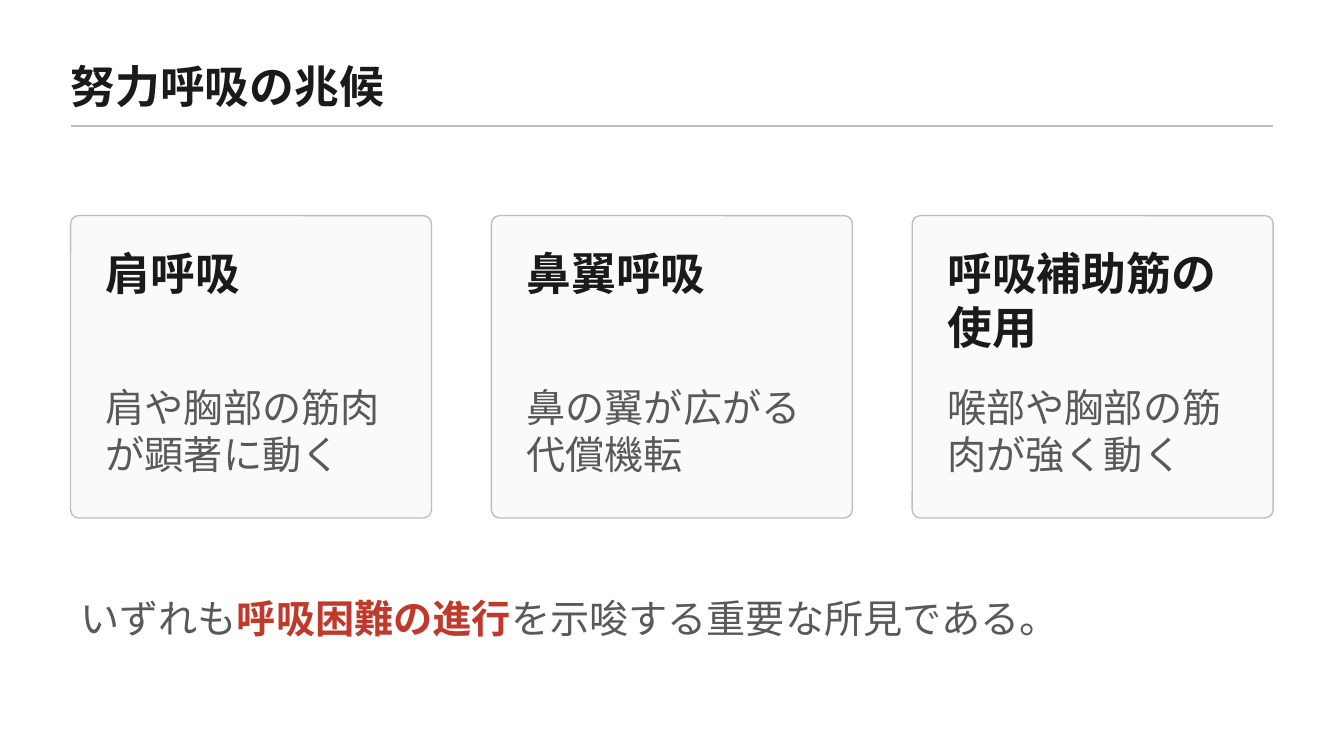
from pptx import Presentation
from pptx.dml.color import RGBColor
from pptx.enum.shapes import MSO_CONNECTOR, MSO_SHAPE
from pptx.enum.text import MSO_ANCHOR
from pptx.oxml.ns import qn
from pptx.util import Pt

INK, GREY, RED = "1A1A1A", "595959", "C0392B"
RULE, PALE = "BFBFBF", "FAFAFA"
HEAD = {"size": Pt(32), "bold": True}
BODY = {"size": Pt(28), "bold": False}
LEFT, WIDTH, GAP = 50.4, 859, 42.8
CARDS = [
    ("肩呼吸", "肩や胸部の筋肉が顕著に動く"),
    ("鼻翼呼吸", "鼻の翼が広がる代償機転"),
    ("呼吸補助筋の使用", "喉部や胸部の筋肉が強く動く"),
]


def color(code):
    """Turn a hex string into a colour."""
    return RGBColor.from_string(code)


def add_text(slide, box, runs, anchor=MSO_ANCHOR.TOP, inset=None):
    """Place a wrapped text box holding one paragraph of styled runs."""
    frame = slide.shapes.add_textbox(*map(Pt, box)).text_frame
    frame.word_wrap = True
    frame.vertical_anchor = anchor
    if inset is not None:
        for side in ("left", "top", "right", "bottom"):
            setattr(frame, f"margin_{side}", Pt(inset))
    for text, code, style in runs:
        run = frame.paragraphs[0].add_run()
        run.text = text
        for key, value in {"name": "Arial", **style}.items():
            setattr(run.font, key, value)
        run.font.color.rgb = color(code)


def add_title(slide, box, text):
    """Place the title with a rule along the bottom of its box."""
    x, y, w, h = box
    add_text(slide, box, [(text, INK, HEAD)], MSO_ANCHOR.MIDDLE, 0)
    rule = slide.shapes.add_connector(
        MSO_CONNECTOR.STRAIGHT, Pt(x), Pt(y + h), Pt(x + w), Pt(y + h))
    rule.line.color.rgb = color(RULE)
    rule.line.width = Pt(1)
    props = rule._element.spPr
    props.append(props.makeelement(qn("a:effectLst"), {}))


def add_card(slide, box, head, body):
    """Place a rounded card with its heading and description."""
    x, y, w, h = box
    card = slide.shapes.add_shape(MSO_SHAPE.ROUNDED_RECTANGLE, *map(Pt, box))
    card.adjustments[0] = 0.027
    card.shadow.inherit = False
    card.fill.solid()
    card.fill.fore_color.rgb = color(PALE)
    card.line.color.rgb = color(RULE)
    card.line.width = Pt(1)
    pad = 18
    add_text(slide, (x + pad, y + pad, w - 2 * pad, 64.8), [(head, INK, HEAD)])
    add_text(slide, (x + pad, y + 116, w - 2 * pad, 108), [(body, GREY, BODY)])


def add_cards(slide, box, cards):
    """Spread the cards evenly across the box."""
    x, y, w, h = box
    wide = (w - GAP * (len(cards) - 1)) / len(cards)
    for i, (head, body) in enumerate(cards):
        add_card(slide, (x + i * (wide + GAP), y, wide, h), head, body)


def add_note(slide, box):
    """Place the closing sentence with its stressed phrase."""
    add_text(slide, box, [
        ("いずれも", GREY, BODY),
        ("呼吸困難の進行", RED, {**BODY, "bold": True}),
        ("を示唆する重要な所見である。", GREY, BODY),
    ], MSO_ANCHOR.MIDDLE)


def main():
    """Build the slide and save it."""
    deck = Presentation()
    deck.slide_width, deck.slide_height = Pt(960), Pt(540)
    slide = deck.slides.add_slide(deck.slide_layouts[6])
    add_title(slide, (LEFT, 32.4, WIDTH, 57.6), "努力呼吸の兆候")
    add_cards(slide, (LEFT, 154, WIDTH, 216), CARDS)
    add_note(slide, (LEFT, 419.8, WIDTH, 43.2))
    deck.save("out.pptx")


if __name__ == "__main__":
    main()
